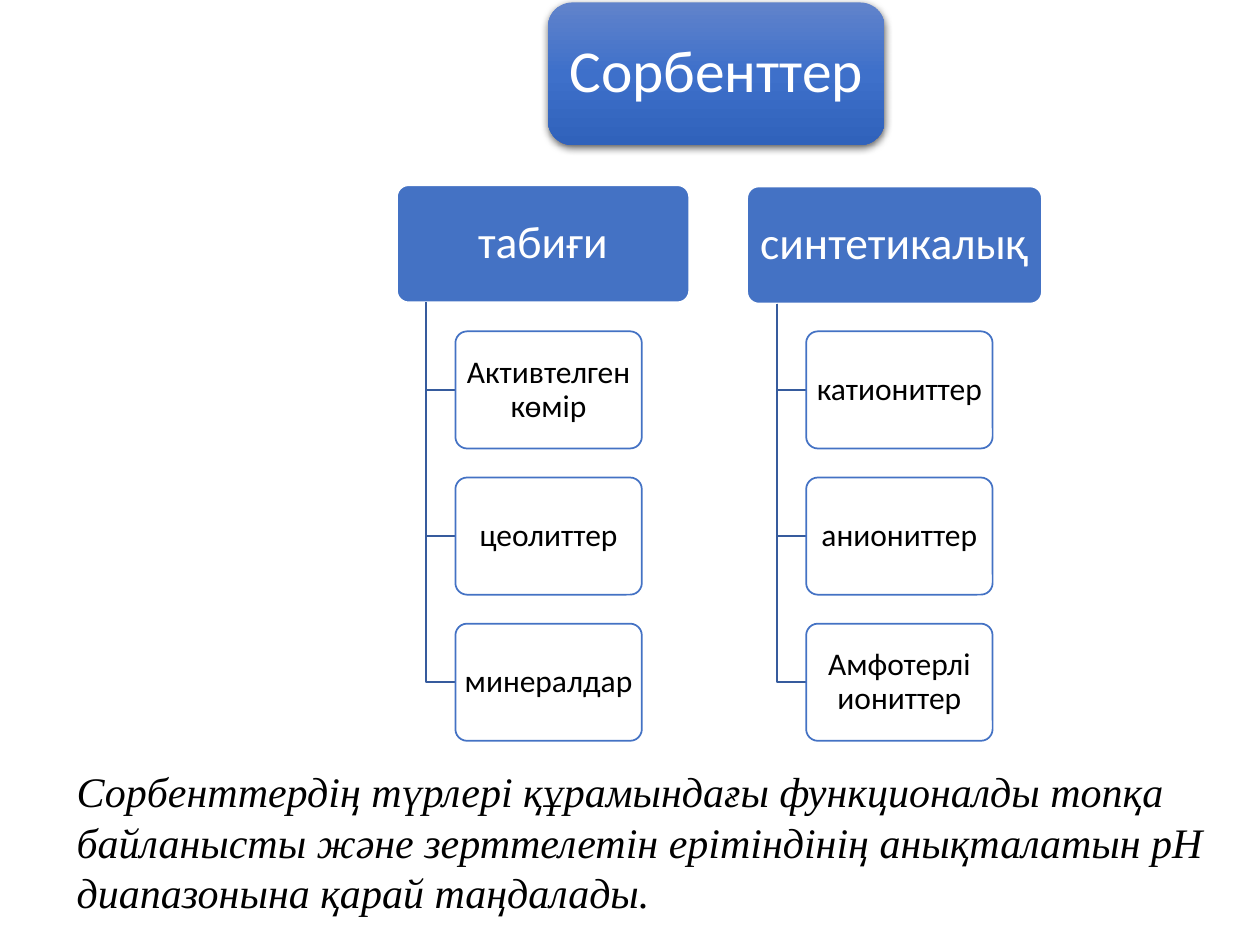
from copy import deepcopy

from lxml import etree
from pptx import Presentation
from pptx.dml.color import RGBColor
from pptx.enum.shapes import MSO_SHAPE as Shape
from pptx.enum.text import MSO_ANCHOR as Anchor, PP_ALIGN as Align
from pptx.oxml import parse_xml
from pptx.oxml.ns import nsdecls, qn
from pptx.util import Inches, Pt


def rgb(value):
    return RGBColor.from_string(value)


def add_box(left, top, width, height, text, size, color, fill, line=None, radius=0.1):
    box = slide.shapes.add_shape(
        Shape.ROUNDED_RECTANGLE, Inches(left), Inches(top), Inches(width), Inches(height))
    box.adjustments[0] = radius
    box.shadow.inherit = False
    box.fill.solid()
    box.fill.fore_color.rgb = rgb(fill)
    if line:
        box.line.color.rgb = rgb(line)
        box.line.width = Pt(1)
    else:
        box.line.fill.background()
    frame = box.text_frame
    frame.word_wrap = True
    frame.vertical_anchor = Anchor.MIDDLE
    frame.margin_left = frame.margin_right = Inches(0.03)
    frame.margin_top = frame.margin_bottom = Inches(0.03)
    frame.text = text
    paragraph = frame.paragraphs[0]
    paragraph.alignment = Align.CENTER
    paragraph.line_spacing = 0.9
    font = paragraph.runs[0].font
    font.name, font.size, font.color.rgb = "Calibri", Pt(size), rgb(color)
    return box


prs = Presentation()
prs.slide_width, prs.slide_height = Inches(10), Inches(7.5)
slide = prs.slides.add_slide(prs.slide_layouts[6])

# Root of the classification, with gradient and shadow
root = add_box(4.35, 0.02, 2.67, 1.13, "Сорбенттер", 34, "FFFFFF", "3E70CA", radius=0.17)
root.fill.gradient()
root.fill.gradient_angle = 270
stop_list = root._element.spPr.find(".//" + qn("a:gsLst"))
stop_list.insert(1, deepcopy(stop_list[0]))
for stop, position, color in zip(
        root.fill.gradient_stops, (0, 0.5, 1), ("6183CB", "3E70CA", "3062BB")):
    stop.position = position
    stop.color.rgb = rgb(color)
root._element.spPr.find(qn("a:effectLst")).append(parse_xml(
    f'<a:outerShdw {nsdecls("a")} blurRad="57150" dist="19050" dir="5400000" '
    'algn="ctr" rotWithShape="0"><a:srgbClr val="000000">'
    '<a:alpha val="63000"/></a:srgbClr></a:outerShdw>'))

# Branches: heading, left, top, width, sorbents
branches = [
    ("табиғи", 3.15, 1.47, 2.32, ["Активтелген көмір", "цеолиттер", "минералдар"]),
    ("синтетикалық", 5.93, 1.48, 2.34, ["катиониттер", "аниониттер", "Амфотерлі иониттер"]),
]
box_height = 0.93
first_top, row_step = 2.63, 1.16
for heading, left, top, width, sorbents in branches:
    add_box(left, top, width, box_height, heading, 26, "FFFFFF", "4472C4", "FFFFFF")
    trunk_x = left + width / 10
    sorbent_left = left + width / 5
    for row, sorbent in enumerate(sorbents):
        sorbent_top = first_top + row * row_step
        middle = sorbent_top + box_height / 2

        # Elbow from the heading to the sorbent
        builder = slide.shapes.build_freeform(Inches(trunk_x), Inches(top + box_height))
        builder.add_line_segments(
            [(Inches(trunk_x), Inches(middle)), (Inches(sorbent_left), Inches(middle))],
            close=False)
        elbow = builder.convert_to_shape()
        elbow.shadow.inherit = False
        elbow.fill.background()
        elbow.line.color.rgb = rgb("365B9D")
        elbow.line.width = Pt(1)

        sorbent_box = add_box(sorbent_left, sorbent_top, 1.48, box_height,
                              sorbent, 18, "000000", "FFFFFF", "4472C4")
        fill_color = sorbent_box._element.spPr.find(qn("a:solidFill"))[0]
        etree.SubElement(fill_color, qn("a:alpha")).set("val", "90000")

# Conclusion
conclusion = slide.shapes.add_textbox(Inches(0.51), Inches(6.03), Inches(9.29), Inches(1.31))
conclusion.text_frame.word_wrap = True
conclusion.text_frame.text = (
    "Сорбенттердің түрлері құрамындағы функционалды топқа байланысты және "
    "зерттелетін ерітіндінің анықталатын рН диапазонына қарай таңдалады.")
font = conclusion.text_frame.paragraphs[0].runs[0].font
font.name, font.size, font.italic = "Times New Roman", Pt(24), True
font.color.rgb = rgb("000000")

prs.save("out.pptx")
